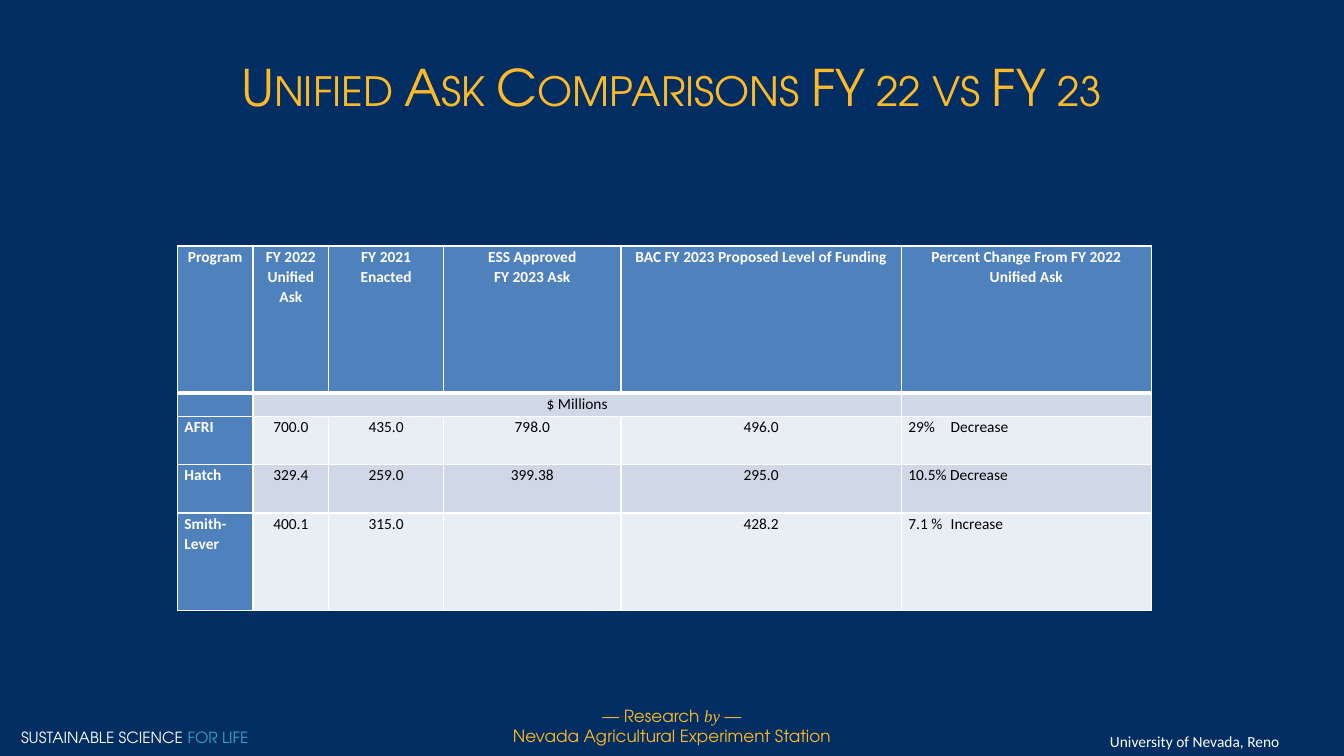
import pptx
import pptx.dml.color
import pptx.enum.text
import pptx.oxml.ns
import pptx.util
from lxml import etree

WIDTH, HEIGHT = pptx.util.Inches(13.33), pptx.util.Inches(7.5)
NAVY, GOLD, SKY, WHITE, BLACK = "002E62", "FDB927", "3AA3D2", "FFFFFF", "000000"
HEADER, BAND_DARK, BAND_LIGHT = "4F81BD", "D0D8E8", "E9EDF4"
SANS, GEOMETRIC, SERIF = "Calibri", "TeX Gyre Adventor", "Times New Roman"
CENTER = pptx.enum.text.PP_ALIGN.CENTER
LEFT = pptx.enum.text.PP_ALIGN.LEFT

# Shares of the slide width and height, in percent
COLUMNS = [5.63, 5.63, 8.55, 13.2, 20.86, 18.6]
ROWS = [19.47, 3.07, 6.4, 6.4, 12.93]
CELLS = [
    ["Program", "FY 2022\nUnified Ask", "FY 2021\nEnacted", "ESS Approved\nFY 2023 Ask",
     "BAC FY 2023 Proposed Level of Funding", "Percent Change From FY 2022 Unified Ask"],
    ["", "$ Millions", "", "", "", ""],
    ["AFRI", "700.0", "435.0", "798.0", "496.0", "29%\tDecrease"],
    ["Hatch", "329.4", "259.0", "399.38", "295.0", "10.5% Decrease"],
    ["Smith-Lever", "400.1", "315.0", "", "428.2", "7.1 %\tIncrease"],
]


def across(share):
    return round(WIDTH * share / 100)


def down(share):
    return round(HEIGHT * share / 100)


def place(x, y, w, h):
    return across(x), down(y), across(w), down(h)


def rgb(color):
    return pptx.dml.color.RGBColor.from_string(color)


def add_xml(parent, tag, **attributes):
    return etree.SubElement(parent, pptx.oxml.ns.qn(tag), attributes)


def add_run(p, text, size, font, color, bold=False, italic=False):
    r = p.add_run()
    r.text = text
    r.font.size = pptx.util.Pt(size)
    r.font.name = font
    r.font.color.rgb = rgb(color)
    r.font.bold = bold
    r.font.italic = italic
    return r


def add_title(s, text):
    sp = s.shapes.title
    sp.left, sp.top, sp.width, sp.height = place(3.3, 4, 93.32, 14.93)
    tf = sp.text_frame
    tf.auto_size = pptx.enum.text.MSO_AUTO_SIZE.NONE
    tf.vertical_anchor = pptx.enum.text.MSO_ANCHOR.MIDDLE
    p = tf.paragraphs[0]
    p.alignment = CENTER
    r = add_run(p, text, 36, GEOMETRIC, GOLD)
    r.font._element.set("cap", "small")


def add_text(s, box, lines, size, align=LEFT, wrap=False):
    """Add a text box; each line is a list of (text, font, color, italic) runs."""
    tf = s.shapes.add_textbox(*place(*box)).text_frame
    tf.word_wrap = wrap
    for i, runs in enumerate(lines):
        p = tf.add_paragraph() if i else tf.paragraphs[0]
        p.alignment = align
        for text, font, color, italic in runs:
            add_run(p, text, size, font, color, italic=italic)


def set_borders(cell, top, bottom):
    tcPr = cell._tc.get_or_add_tcPr()
    for side, points in (("L", 1), ("R", 1), ("T", top), ("B", bottom)):
        ln = add_xml(tcPr, f"a:ln{side}", w=str(pptx.util.Pt(points)))
        add_xml(add_xml(ln, "a:solidFill"), "a:srgbClr", val=WHITE)


def fill_cell(cell, text, fill, color, bold, align):
    cell.margin_left = cell.margin_right = pptx.util.Inches(0.07)
    cell.margin_top = cell.margin_bottom = 0
    cell.fill.solid()
    cell.fill.fore_color.rgb = rgb(fill)
    tf = cell.text_frame
    for i, line in enumerate(text.split("\n")):
        p = tf.add_paragraph() if i else tf.paragraphs[0]
        p.alignment = align
        p.line_spacing = 1.07
        if "\t" in line:
            tabs = add_xml(p._p.get_or_add_pPr(), "a:tabLst")
            add_xml(tabs, "a:tab", pos=str(pptx.util.Inches(0.42)), algn="l")
        if line:
            add_run(p, line, 11, SANS, color, bold)
        else:
            add_xml(p._p, "a:endParaRPr", sz="1100")


def add_funding_table(s):
    box = place(13.2, 32.53, sum(COLUMNS), sum(ROWS))
    table = s.shapes.add_table(len(ROWS), len(COLUMNS), *box).table
    for column, share in zip(table.columns, COLUMNS):
        column.width = across(share)
    for row, share in zip(table.rows, ROWS):
        row.height = down(share)
    for i, texts in enumerate(CELLS):
        for j, text in enumerate(texts):
            heading = i == 0 or j == 0
            band = BAND_DARK if i % 2 else BAND_LIGHT
            at_left = i > 0 and j in (0, len(COLUMNS) - 1)
            cell = table.cell(i, j)
            set_borders(cell, 3 if i == 1 else 1, 3 if i == 0 else 1)
            fill_cell(cell, text, HEADER if heading else band,
                      WHITE if heading else BLACK, heading, LEFT if at_left else CENTER)
    table.cell(1, 1).merge(table.cell(1, 4))


def add_footer(s):
    add_text(s, (0.83, 95.6, 18.98, 3.87),
             [[("SUSTAINABLE SCIENCE ", GEOMETRIC, WHITE, False),
               ("FOR LIFE", GEOMETRIC, SKY, False)]], 11)
    add_text(s, (81.85, 96.13, 14.48, 3.87),
             [[("University of Nevada, Reno", SANS, WHITE, False)]], 11)
    add_text(s, (0, 92.67, 100, 6.67),
             [[("— Research ", GEOMETRIC, GOLD, False), ("by", SERIF, GOLD, True),
               (" —", GEOMETRIC, GOLD, False)],
              [("Nevada Agricultural Experiment Station", GEOMETRIC, GOLD, False)]],
             12, CENTER, wrap=True)


def main():
    prs = pptx.Presentation()
    prs.slide_width, prs.slide_height = WIDTH, HEIGHT
    s = prs.slides.add_slide(prs.slide_layouts.get_by_name("Title Only"))
    s.background.fill.solid()
    s.background.fill.fore_color.rgb = rgb(NAVY)
    add_footer(s)
    add_title(s, "Unified Ask Comparisons FY 22 vs FY 23")
    add_funding_table(s)
    prs.save("out.pptx")


if __name__ == "__main__":
    main()
